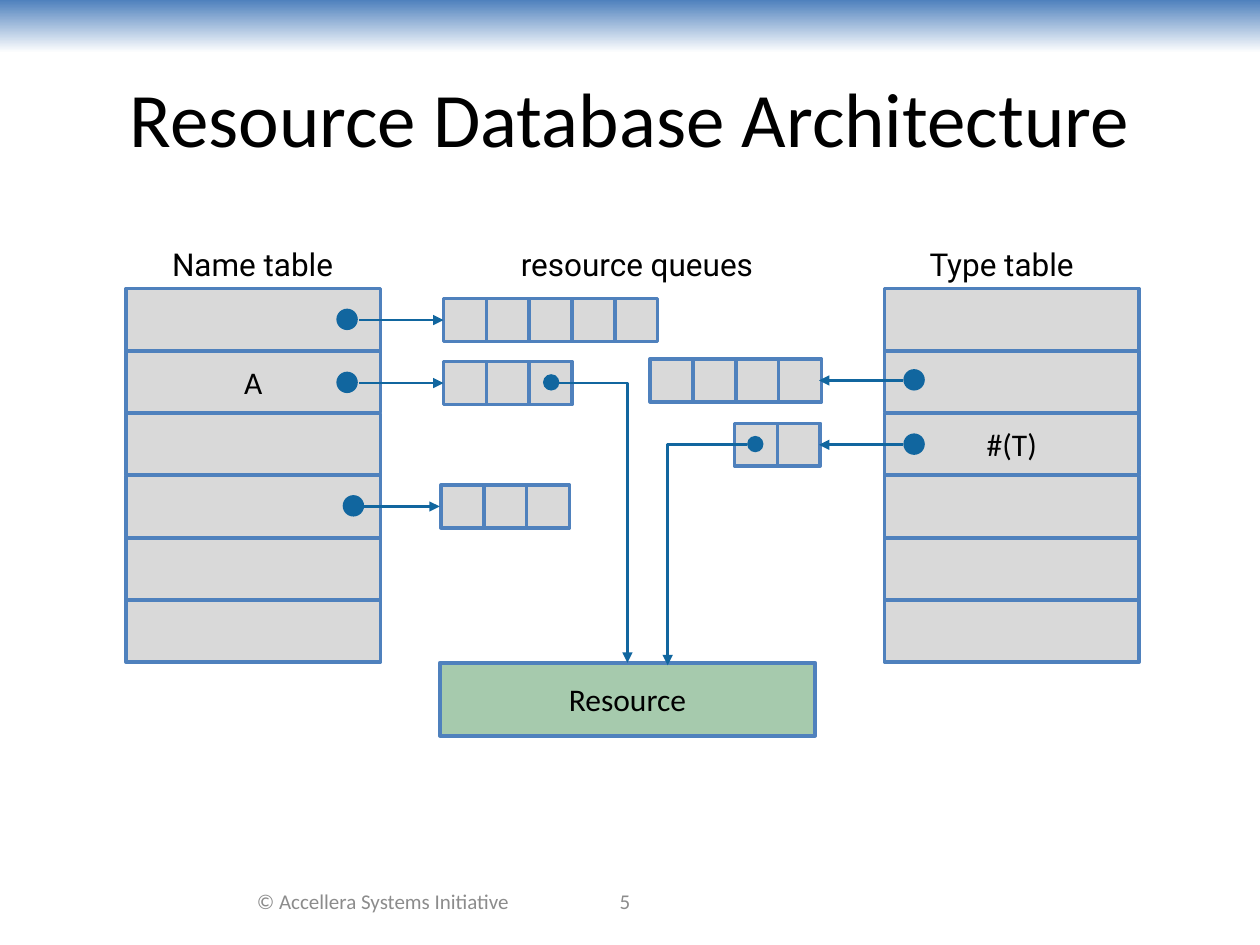
"""Build the resource database architecture slide."""
from pptx import Presentation, util as u
from pptx.dml.color import RGBColor
from pptx.enum import shapes, text
from pptx.oxml.ns import qn
from lxml import etree

BLUE, DARK, GREY, GREEN = "4F81BD", "11669F", "D9D9D9", "A6CAAD"
LABELS = [
    ("Resource Database Architecture", (0.5, 0.3, 9, 1.25), dict(size=44)),
    ("© Accellera Systems Initiative", (1.83, 6.95, 2.42, 0.4), dict(size=12, color="8C8C8C")),
    ("5", (4, 6.95, 1.92, 0.4), dict(size=12, color="8C8C8C")),
]
HEADS = [
    ("Name table", (1.25, 1.93, 1.51, 0.37)),
    ("Type table", (7.26, 1.93, 1.38, 0.37)),
    ("resource queues", (4.01, 1.93, 2.09, 0.37)),
]
TABLES = [
    (1, ["", "A", "", "", "", ""]),
    (7.02, ["", "", "#(T)", "", "", ""]),
]
QUEUES = [
    (3.52, 2.37, 5),
    (3.52, 2.87, 3),
    (3.5, 3.85, 3),
    (5.16, 2.85, 4),
    (5.83, 3.36, 2),
]
DOTS = [
    (2.67, 2.45, 0.17),
    (2.67, 2.95, 0.17),
    (2.72, 3.93, 0.17),
    (7.17, 2.93, 0.17),
    (7.17, 3.44, 0.17),
    (4.31, 2.97, 0.13),
    (5.93, 3.46, 0.13),
]
ARROWS = [
    (2.85, 2.54, 3.52, 2.54),
    (2.85, 3.04, 3.52, 3.04),
    (2.89, 4.02, 3.49, 4.02),
    (7.17, 3.02, 6.5, 3.02),
    (7.17, 3.53, 6.5, 3.53),
]
BENDS = [
    (4.44, 3.04, 4.98, 5.26),
    (5.93, 3.53, 5.3, 5.28),
]
TOP, ROW, STEP = 2.29, 0.49, 0.495
CELL, PITCH = 0.34, 0.34

deck = Presentation()
deck.slide_width, deck.slide_height = u.Inches(10), u.Inches(7.5)
page = deck.slides.add_slide(deck.slide_layouts[6])


def inch(vals):
    return [u.Inches(v) for v in vals]


def rgb(code):
    return RGBColor.from_string(code)


def write(words, spot=None, shape=None, size=18, font="Calibri", color="000000",
          wrap=True, space=None):
    shape = shape or page.shapes.add_textbox(*inch(spot))
    frame = shape.text_frame
    frame.word_wrap = wrap
    if not wrap:
        frame.auto_size = text.MSO_AUTO_SIZE.SHAPE_TO_FIT_TEXT
    frame.vertical_anchor = text.MSO_ANCHOR.MIDDLE
    para = frame.paragraphs[0]
    para.alignment = text.PP_ALIGN.CENTER
    para.line_spacing = space
    run = para.add_run()
    run.text = words
    run.font.size, run.font.name = u.Pt(size), font
    run.font.color.rgb = rgb(color)


def draw(spot, fill, line=None, words="", kind=shapes.MSO_SHAPE.RECTANGLE):
    shape = page.shapes.add_shape(kind, *inch(spot))
    shape.shadow.inherit = False
    shape.fill.solid()
    shape.fill.fore_color.rgb = rgb(fill)
    if line:
        shape.line.color.rgb = rgb(line)
        shape.line.width = u.Pt(2)
    else:
        shape.line.fill.background()
    if words:
        write(words, shape=shape)
    return shape


def link(ends, bent=False):
    kind = shapes.MSO_CONNECTOR.ELBOW if bent else shapes.MSO_CONNECTOR.STRAIGHT
    wire = page.shapes.add_connector(kind, *inch(ends))
    wire.line.color.rgb = rgb(DARK)
    wire.line.width = u.Pt(1.5)
    props = wire._element.spPr
    if bent:
        props.find(qn("a:prstGeom")).set("prst", "bentConnector2")
    tip = etree.SubElement(props.find(qn("a:ln")), qn("a:tailEnd"))
    tip.set("type", "triangle")
    etree.SubElement(props, qn("a:effectLst"))


band = draw((0, 0, 10, 0.42), BLUE)
band.fill.gradient()
band.fill.gradient_angle = 270
for stop, code in zip(band.fill.gradient_stops, (BLUE, "FFFFFF")):
    stop.color.rgb = rgb(code)

for words, spot, form in LABELS:
    write(words, spot, **form)
for left, rows in TABLES:
    for i, words in enumerate(rows):
        draw((left, TOP + i * STEP, 2.02, ROW), GREY, BLUE, words)
for left, top, count in QUEUES:
    for i in range(count):
        draw((left + i * PITCH, top, CELL, CELL), GREY, BLUE)
draw((3.49, 5.26, 2.98, 0.58), GREEN, BLUE, "Resource")
for left, top, size in DOTS:
    draw((left, top, size, size), DARK, kind=shapes.MSO_SHAPE.OVAL)
for ends in ARROWS:
    link(ends)
for ends in BENDS:
    link(ends, bent=True)
for words, spot in HEADS:
    write(words, spot, font="Roboto", wrap=False, space=0.9)

deck.save("out.pptx")
